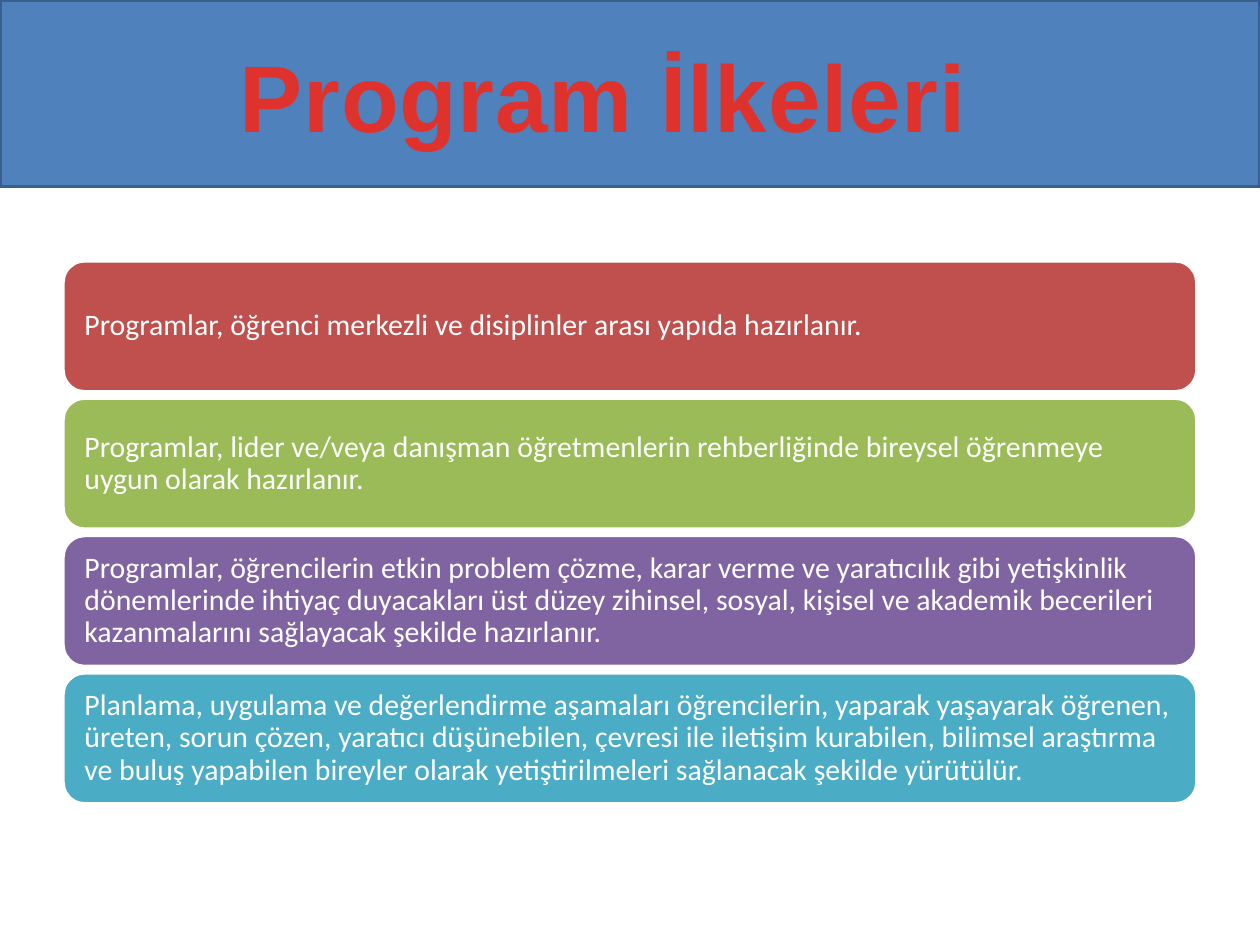
from pptx import Presentation
from pptx.dml.color import RGBColor
from pptx.enum.shapes import MSO_SHAPE
from pptx.enum.text import MSO_ANCHOR, MSO_AUTO_SIZE, PP_ALIGN
from pptx.util import Inches, Pt

WHITE = RGBColor(0xFF, 0xFF, 0xFF)
BAND_BLUE = RGBColor(0x4F, 0x81, 0xBD)
BAND_EDGE = RGBColor(0x3A, 0x5F, 0x8C)
TITLE_RED = RGBColor(0xE0, 0x32, 0x2D)
RED = RGBColor(0xC0, 0x50, 0x4D)
GREEN = RGBColor(0x9B, 0xBB, 0x59)
PURPLE = RGBColor(0x80, 0x64, 0xA2)
TEAL = RGBColor(0x4B, 0xAC, 0xC6)

CARD_TOP = 2.07
CARD_HEIGHT = 1.04
CARD_STEP = 1.09

PRINCIPLES = [
    (RED, "Programlar, öğrenci merkezli ve disiplinler arası yapıda hazırlanır."),
    (GREEN, "Programlar, lider ve/veya danışman öğretmenlerin rehberliğinde bireysel "
            "öğrenmeye uygun olarak hazırlanır."),
    (PURPLE, "Programlar, öğrencilerin etkin problem çözme, karar verme ve yaratıcılık gibi "
             "yetişkinlik dönemlerinde ihtiyaç duyacakları üst düzey zihinsel, sosyal, kişisel "
             "ve akademik becerileri kazanmalarını sağlayacak şekilde hazırlanır."),
    (TEAL, "Planlama, uygulama ve değerlendirme aşamaları öğrencilerin, yaparak yaşayarak "
           "öğrenen, üreten, sorun çözen, yaratıcı düşünebilen, çevresi ile iletişim "
           "kurabilen, bilimsel araştırma ve buluş yapabilen bireyler olarak "
           "yetiştirilmeleri sağlanacak şekilde yürütülür."),
]


def add_box(slide, kind, left, top, width, height, fill, line):
    """Add a filled preset shape with a two-point outline."""
    shape = slide.shapes.add_shape(
        kind, Inches(left), Inches(top), Inches(width), Inches(height))
    shape.shadow.inherit = False
    shape.fill.solid()
    shape.fill.fore_color.rgb = fill
    shape.line.color.rgb = line
    shape.line.width = Pt(2)
    return shape


def add_run(paragraph, text, font_name, size, color, bold=False):
    """Add one formatted run to a paragraph."""
    run = paragraph.add_run()
    run.text = text
    run.font.name = font_name
    run.font.size = Pt(size)
    run.font.color.rgb = color
    run.font.bold = bold
    return run


def add_card(slide, top, fill, text):
    """Add a rounded card that states one principle."""
    card = add_box(slide, MSO_SHAPE.ROUNDED_RECTANGLE, 0.5, top, 9, CARD_HEIGHT, fill, WHITE)
    frame = card.text_frame
    frame.word_wrap = True
    frame.vertical_anchor = MSO_ANCHOR.MIDDLE
    frame.margin_left = frame.margin_right = Inches(0.12)
    frame.margin_top = frame.margin_bottom = Inches(0.12)
    paragraph = frame.paragraphs[0]
    paragraph.alignment = PP_ALIGN.LEFT
    paragraph.line_spacing = 0.9
    add_run(paragraph, text, "Calibri", 17, WHITE)


def add_title(slide, text):
    """Place the title placeholder in front of a full-width band."""
    add_box(slide, MSO_SHAPE.RECTANGLE, 0, 0, 10, 1.48, BAND_BLUE, BAND_EDGE)
    title = slide.shapes.title
    title.left, title.top = Inches(1.77), Inches(0.24)
    title.width, title.height = Inches(6.04), Inches(1.01)
    title.element.getparent().append(title.element)
    frame = title.text_frame
    frame.word_wrap = False
    frame.auto_size = MSO_AUTO_SIZE.NONE
    frame.vertical_anchor = MSO_ANCHOR.BOTTOM
    paragraph = frame.paragraphs[0]
    paragraph.alignment = PP_ALIGN.CENTER
    run = add_run(paragraph, text, "Arial", 54, TITLE_RED, bold=True)
    run.font.element.set("spc", "50") if hasattr(run.font, "element") else \
        paragraph.runs[0].font._element.set("spc", "50") if hasattr(run.font, "_element") else \
        run._r.get_or_add_rPr().set("spc", "50")


def main():
    """Build and save the slide."""
    presentation = Presentation()
    presentation.slide_width = Inches(10)
    presentation.slide_height = Inches(7.5)
    slide = presentation.slides.add_slide(presentation.slide_layouts[5])
    for index, (fill, text) in enumerate(PRINCIPLES):
        add_card(slide, CARD_TOP + index * CARD_STEP, fill, text)
    add_title(slide, "Program İlkeleri")
    presentation.save("out.pptx")


if __name__ == "__main__":
    main()
